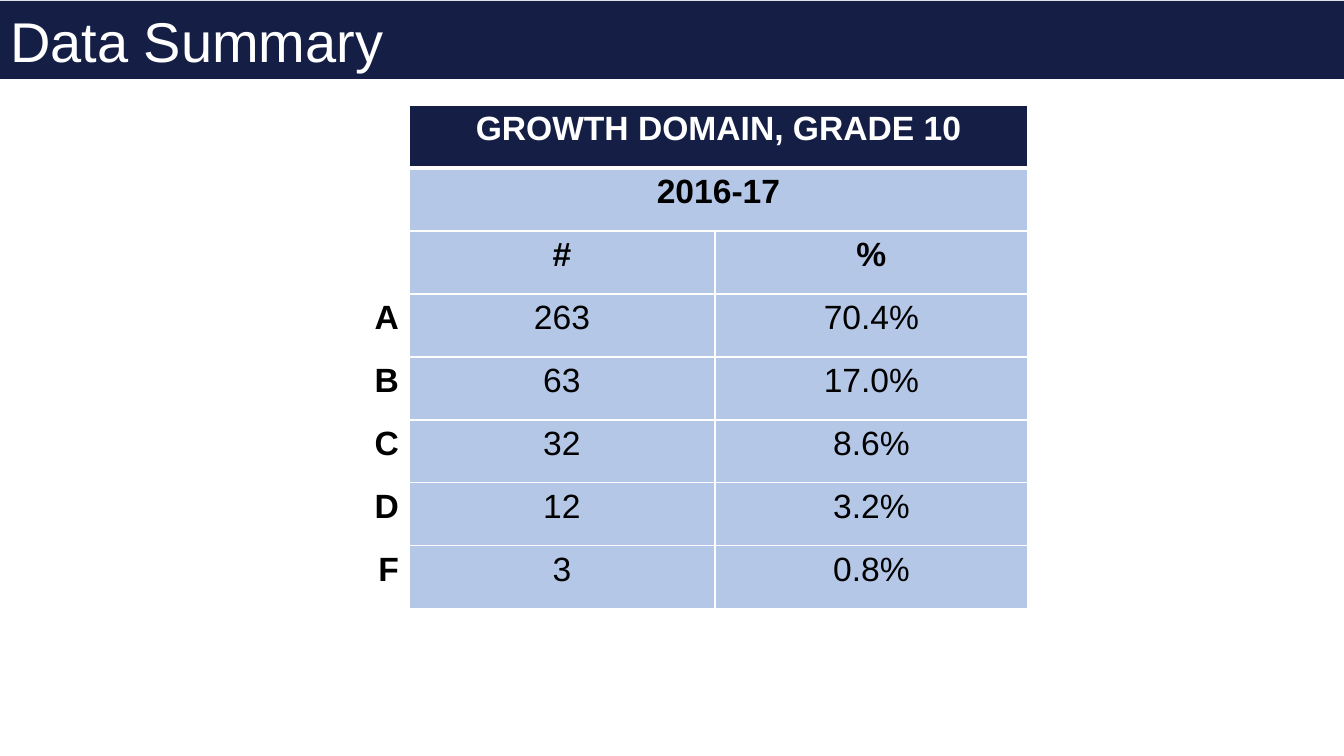
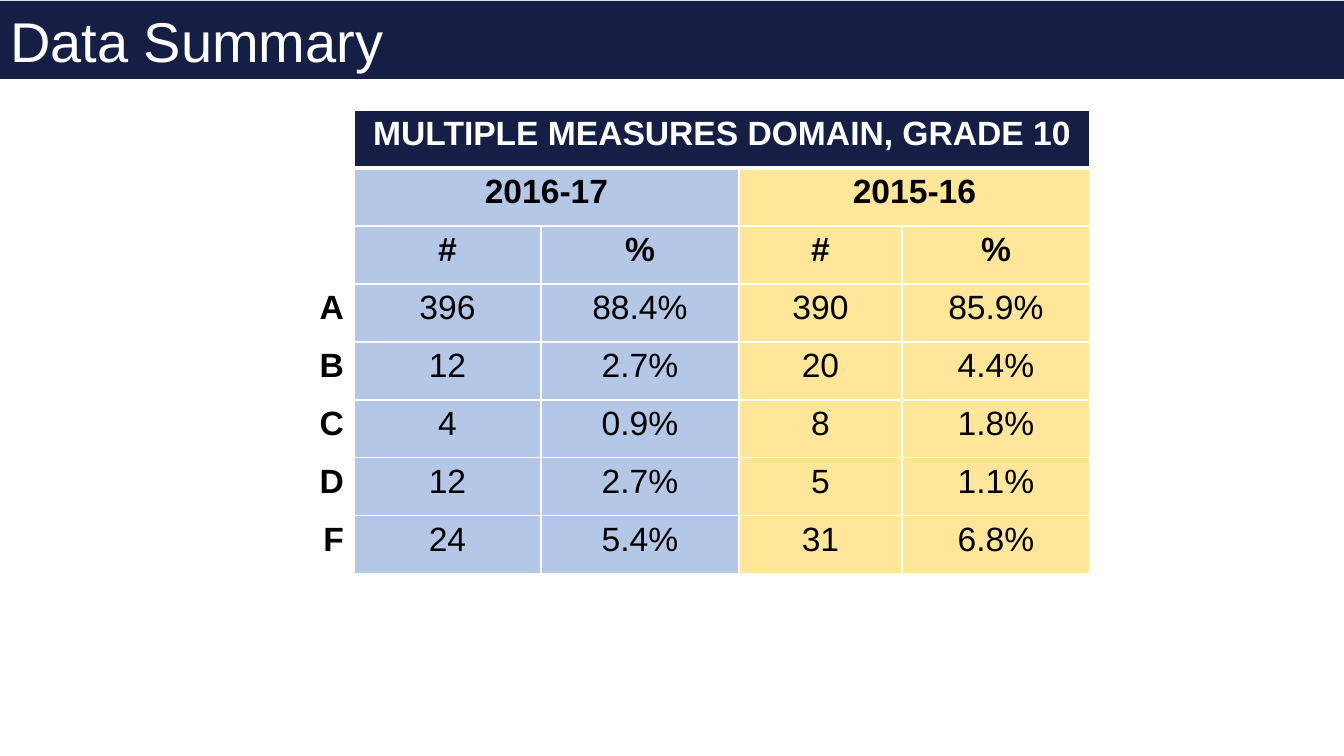
from dataclasses import dataclass

from lxml.etree import SubElement
from pptx import Presentation
from pptx.dml.color import RGBColor
from pptx.enum.text import MSO_ANCHOR, MSO_AUTO_SIZE, PP_ALIGN
from pptx.oxml.ns import qn
from pptx.util import Emu, Pt

# Shared look
FONT = "Arial"
NAVY = RGBColor(0x15, 0x1F, 0x46)
BLUE = RGBColor(0xB4, 0xC7, 0xE7)
YELLOW = RGBColor(0xFF, 0xE6, 0x99)
WHITE = RGBColor(0xFF, 0xFF, 0xFF)
BLACK = RGBColor(0x00, 0x00, 0x00)
GRADES = "ABCDF"
HEADER_ROWS = 3
TITLE_ONLY = 5


@dataclass(frozen=True)
class Year:
    label: str
    color: RGBColor
    counts: list[str]
    percents: list[str]


@dataclass(frozen=True)
class GradeTable:
    heading: str
    left: int
    top: int
    col_widths: list[int]
    row_height: int
    corner_rows: int
    years: list[Year]


GROWTH = GradeTable(
    "GROWTH DOMAIN, GRADE 10", 258, 105, [151, 306, 313], 63, 3,
    [Year("2016-17", BLUE, ["263", "63", "32", "12", "3"],
          ["70.4%", "17.0%", "8.6%", "3.2%", "0.8%"])])
MEASURES = GradeTable(
    "MULTIPLE MEASURES DOMAIN, GRADE 10", 227, 110, [127, 187, 198, 163, 188], 58, 1,
    [Year("2016-17", BLUE, ["396", "12", "4", "12", "24"],
          ["88.4%", "2.7%", "0.9%", "2.7%", "5.4%"]),
     Year("2015-16", YELLOW, ["390", "20", "8", "5", "31"],
          ["85.9%", "4.4%", "1.8%", "1.1%", "6.8%"])])


def px(n: int) -> Emu:
    return Emu(round(n * 914400 / 100.8))


def add_title(slide, text: str) -> None:
    sp = slide.shapes.title
    sp.left, sp.top, sp.width, sp.height = px(0), px(1), px(1344), px(78)
    sp.fill.solid()
    sp.fill.fore_color.rgb = NAVY
    tf = sp.text_frame
    tf.text = text
    tf.auto_size = MSO_AUTO_SIZE.NONE
    tf.vertical_anchor = MSO_ANCHOR.MIDDLE
    p = tf.paragraphs[0]
    p.alignment = PP_ALIGN.LEFT
    p.font.name, p.font.size = FONT, Pt(40)
    p.font.color.rgb = WHITE


def set_borders(cell, row: int) -> None:
    """White rules, heavier between the heading and the rest."""
    widths = {"L": 1, "R": 1, "T": 3 if row == 1 else 1, "B": 3 if row == 0 else 1}
    tc_pr = cell._tc.get_or_add_tcPr()
    for side, width in widths.items():
        ln = SubElement(tc_pr, qn(f"a:ln{side}"), w=str(Pt(width)))
        fill = SubElement(ln, qn("a:solidFill"))
        SubElement(fill, qn("a:srgbClr"), val=str(WHITE))


def set_text(cell, text: str, bold: bool = True, color: RGBColor = BLACK,
             align: PP_ALIGN = PP_ALIGN.CENTER) -> None:
    cell.text = text
    p = cell.text_frame.paragraphs[0]
    p.alignment = align
    p.font.name, p.font.size, p.font.bold = FONT, Pt(24), bold
    p.font.color.rgb = color


def add_grade_table(slide, spec: GradeTable) -> None:
    rows, cols = HEADER_ROWS + len(GRADES), len(spec.col_widths)
    frame = slide.shapes.add_table(
        rows, cols, px(spec.left), px(spec.top),
        px(sum(spec.col_widths)), px(rows * spec.row_height))
    table = frame.table
    table.first_row = table.horz_banding = False
    for column, width in zip(table.columns, spec.col_widths):
        column.width = px(width)

    # Borders and fills
    for r in range(rows):
        table.rows[r].height = px(spec.row_height)
        for c in range(cols):
            cell = table.cell(r, c)
            set_borders(cell, r)
            if c == 0:
                cell.fill.background()
            else:
                cell.fill.solid()
                cell.fill.fore_color.rgb = NAVY if r == 0 else spec.years[(c - 1) // 2].color

    # Heading and grade labels
    if spec.corner_rows > 1:
        table.cell(0, 0).merge(table.cell(spec.corner_rows - 1, 0))
    table.cell(0, 1).merge(table.cell(0, cols - 1))
    set_text(table.cell(0, 1), spec.heading, color=WHITE)
    for r, grade in enumerate(GRADES, HEADER_ROWS):
        set_text(table.cell(r, 0), grade, align=PP_ALIGN.RIGHT)

    # A pair of columns for each year
    for i, year in enumerate(spec.years):
        first = 1 + 2 * i
        table.cell(1, first).merge(table.cell(1, first + 1))
        set_text(table.cell(1, first), year.label)
        pair = (("#", year.counts), ("%", year.percents))
        for c, (label, values) in enumerate(pair, first):
            set_text(table.cell(2, c), label)
            for r, value in enumerate(values, HEADER_ROWS):
                set_text(table.cell(r, c), value, bold=False)


def main() -> None:
    prs = Presentation()
    prs.slide_width, prs.slide_height = px(1344), px(756)
    for spec in (GROWTH, MEASURES):
        slide = prs.slides.add_slide(prs.slide_layouts[TITLE_ONLY])
        add_title(slide, "Data Summary")
        add_grade_table(slide, spec)
    prs.save("out.pptx")


if __name__ == "__main__":
    main()
